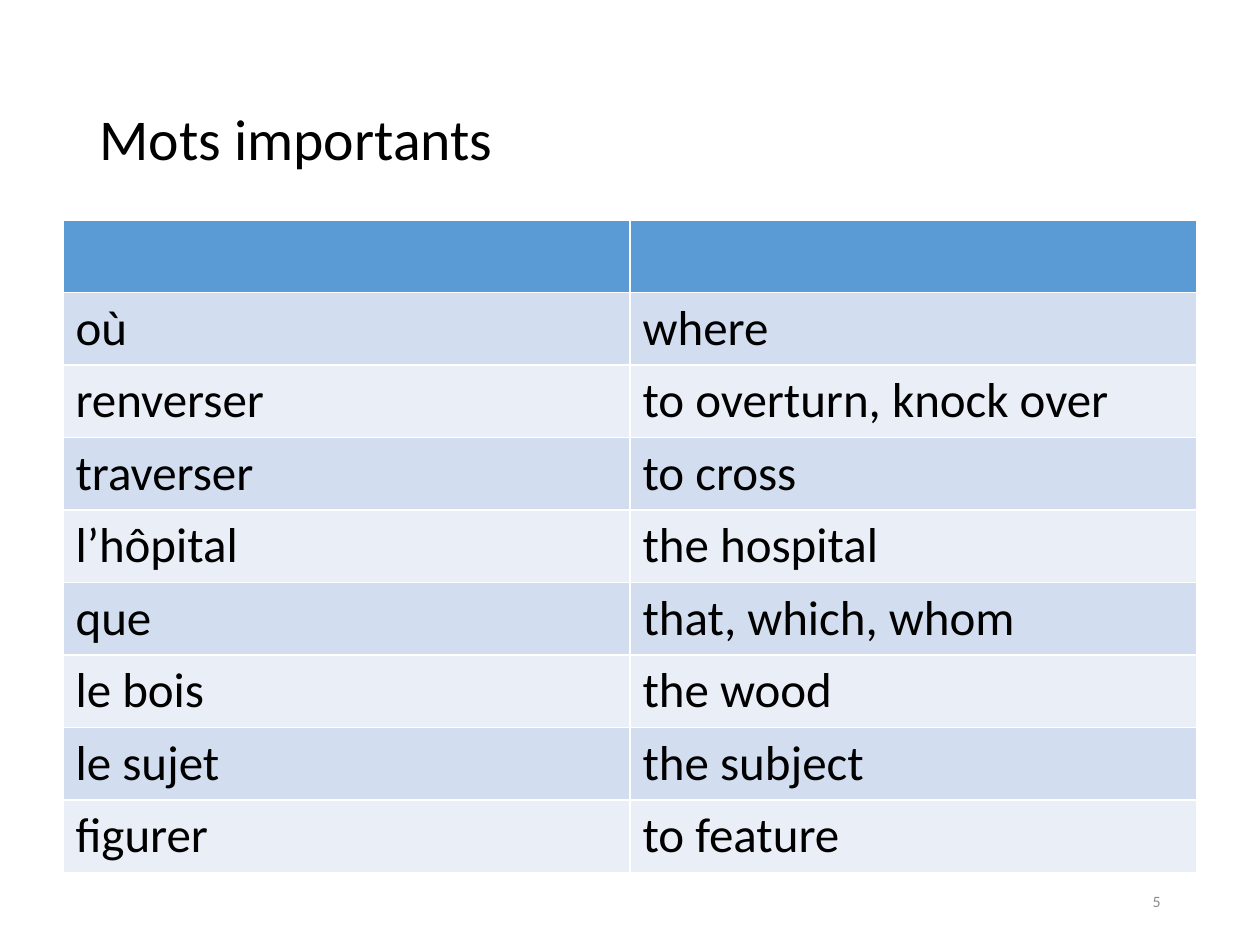
from pptx import Presentation
from pptx.dml.color import RGBColor
from pptx.enum.text import MSO_ANCHOR, PP_ALIGN
from pptx.util import Inches, Pt

HUES = {"text": "000000", "head": "5B9BD5", "dark": "D2DEEF",
        "light": "EAEFF7", "grey": "8C8C8C"}
WORDS = [
    ("où", "where"),
    ("renverser", "to overturn, knock over"),
    ("traverser", "to cross"),
    ("l’hôpital", "the hospital"),
    ("que", "that, which, whom"),
    ("le bois", "the wood"),
    ("le sujet", "the subject"),
    ("figurer", "to feature"),
]


def write(frame, text, size=28, hue="text", align=PP_ALIGN.LEFT, space=None):
    frame.word_wrap = True
    para = frame.paragraphs[0]
    para.alignment = align
    para.line_spacing = space
    run = para.add_run()
    run.text = text
    run.font.name = "Calibri"
    run.font.size = Pt(size)
    run.font.bold = False
    run.font.color.rgb = RGBColor.from_string(HUES[hue])


deck = Presentation()
deck.slide_width, deck.slide_height = Inches(10), Inches(7.5)
slide = deck.slides.add_slide(deck.slide_layouts[5])

# Title
title = slide.shapes.title
title.left, title.top = Inches(0.69), Inches(0.4)
title.width, title.height = Inches(8.62), Inches(1.45)
title.text_frame.vertical_anchor = MSO_ANCHOR.MIDDLE
write(title.text_frame, "Mots importants", size=33, space=0.9)

# Word table: an empty header row, then banded rows
rows = [("", "")] + WORDS
high = Inches(0.57)
table = slide.shapes.add_table(len(rows), 2, Inches(0.5), Inches(1.75),
                               Inches(9), high * len(rows)).table
for r, pair in enumerate(rows):
    table.rows[r].height = high
    band = "head" if r == 0 else "dark" if r % 2 else "light"
    for c, word in enumerate(pair):
        cell = table.cell(r, c)
        cell.fill.solid()
        cell.fill.fore_color.rgb = RGBColor.from_string(HUES[band])
        if word:
            write(cell.text_frame, word)

# Slide number
box = slide.shapes.add_textbox(Inches(7.06), Inches(6.95), Inches(2.25), Inches(0.4))
box.text_frame.vertical_anchor = MSO_ANCHOR.MIDDLE
write(box.text_frame, "5", size=9, hue="grey", align=PP_ALIGN.RIGHT)

deck.save("out.pptx")
